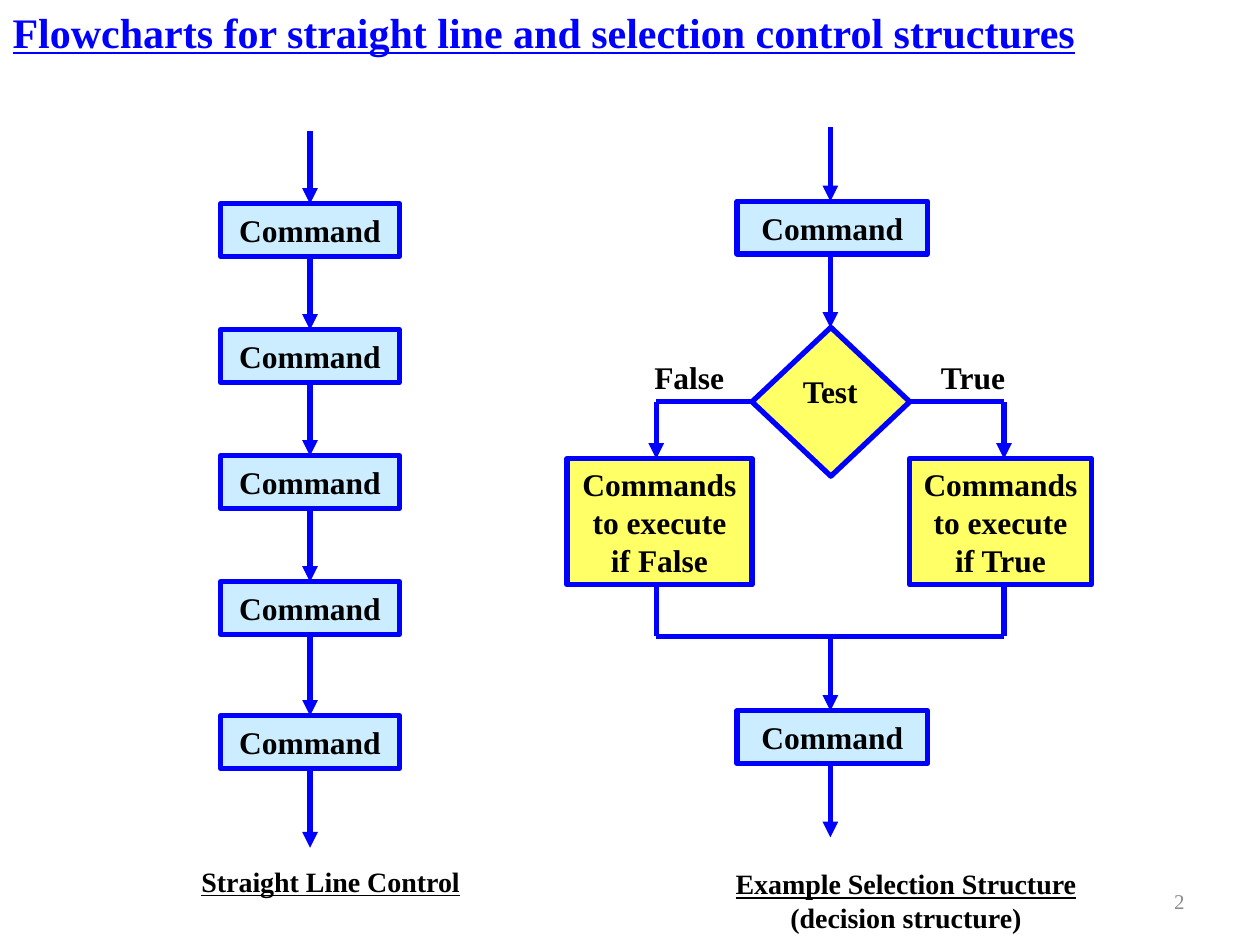
from pptx import Presentation
from pptx.dml.color import RGBColor
from pptx.enum.shapes import MSO_CONNECTOR as Connector, MSO_SHAPE as Shape
from pptx.enum.text import MSO_ANCHOR as Anchor, MSO_AUTO_SIZE as AutoSize, PP_ALIGN as Align
from pptx.oxml.ns import qn
from pptx.util import Cm, Pt
from lxml.etree import SubElement

BLUE = RGBColor(0x00, 0x00, 0xFF)
PALE_BLUE = RGBColor(0xCC, 0xEC, 0xFF)
YELLOW = RGBColor(0xFF, 0xFF, 0x66)
BLACK = RGBColor(0x00, 0x00, 0x00)
GREY = RGBColor(0x8C, 0x8C, 0x8C)

FONT = "Times New Roman"
COMMAND_HEIGHT = 1.06


def write(frame, text, size=18, color=BLACK, bold=True, underlined=(),
          align=Align.CENTER, anchor=Anchor.TOP, wrap=False, fit=AutoSize.NONE):
    """Fill a frame, one paragraph a line; underlined lists line numbers."""
    frame.word_wrap = wrap
    frame.auto_size = fit
    frame.vertical_anchor = anchor
    for number, line in enumerate(text.split("\n")):
        paragraph = frame.add_paragraph() if number else frame.paragraphs[0]
        paragraph.alignment = align
        run = paragraph.add_run()
        run.text = line
        font = run.font
        font.name, font.size, font.bold = FONT, Pt(size), bold
        font.underline = number in underlined
        font.color.rgb = color


def add_label(shapes, text, left, top, width, height, **text_format):
    label = shapes.add_textbox(Cm(left), Cm(top), Cm(width), Cm(height))
    write(label.text_frame, text, **text_format)


def add_node(shapes, kind, left, top, width, height, fill, text=""):
    node = shapes.add_shape(kind, Cm(left), Cm(top), Cm(width), Cm(height))
    node.shadow.inherit = False
    node.fill.solid()
    node.fill.fore_color.rgb = fill
    node.line.color.rgb = BLUE
    node.line.width = Pt(3)
    if text:
        write(node.text_frame, text, anchor=Anchor.MIDDLE)


def add_flow(shapes, x1, y1, x2, y2, arrow=False):
    flow = shapes.add_connector(Connector.STRAIGHT, Cm(x1), Cm(y1), Cm(x2), Cm(y2))
    flow.line.color.rgb = BLUE
    flow.line.width = Pt(3)
    if arrow:
        SubElement(flow.line._get_or_add_ln(), qn("a:tailEnd"), type="triangle")
    SubElement(flow._element.spPr, qn("a:effectLst"))


def draw_straight_line(shapes):
    left, width = 4.45, 3.6
    axis = left + width / 2
    arrow_start = 2.64
    for top in (4.11, 6.65, 9.19, 11.73, 14.43):
        add_flow(shapes, axis, arrow_start, axis, top, arrow=True)
        add_node(shapes, Shape.RECTANGLE, left, top, width, COMMAND_HEIGHT,
                 PALE_BLUE, "Command")
        arrow_start = top + COMMAND_HEIGHT
    add_flow(shapes, axis, arrow_start, axis, 17.09, arrow=True)
    add_label(shapes, "Straight Line Control", 3.81, 17.3, 5.77, 0.94, size=16,
              underlined=(0,), align=Align.LEFT, fit=AutoSize.SHAPE_TO_FIT_TEXT)


def draw_selection(shapes):
    axis, arrow_length = 16.74, 1.49
    test_y, branch_top, branch_height, merge_y = 8.1, 9.25, 2.54, 12.83

    # Test diamond
    add_node(shapes, Shape.DIAMOND, 15.16, 6.6, 3.18, 3, YELLOW)
    add_label(shapes, "Test", 15.9, 7.37, 1.68, 1.02, fit=AutoSize.SHAPE_TO_FIT_TEXT)

    # Commands before and after, each with an arrow in and out
    for top in (4.06, 14.33):
        bottom = top + COMMAND_HEIGHT
        add_node(shapes, Shape.RECTANGLE, 14.86, top, 3.84, COMMAND_HEIGHT,
                 PALE_BLUE, "Command")
        add_flow(shapes, axis, top - arrow_length, axis, top, arrow=True)
        add_flow(shapes, axis, bottom, axis, bottom + arrow_length, arrow=True)

    # Branches: answer, diamond corner, arrow x, box left and width, label left and width
    branches = [
        ("False", 15.16, 13.23, 11.43, 3.73, 12.93, 1.93),
        ("True", 18.34, 20.24, 18.34, 3.66, 18.69, 1.85),
    ]
    for answer, corner, x, left, width, label_left, label_width in branches:
        add_flow(shapes, corner, test_y, x, test_y)
        add_flow(shapes, x, test_y, x, branch_top, arrow=True)
        add_node(shapes, Shape.RECTANGLE, left, branch_top, width, branch_height,
                 YELLOW, f"Commands\nto execute\nif {answer}")
        add_flow(shapes, x, branch_top + branch_height, x, merge_y)
        add_label(shapes, answer, label_left, 7.09, label_width, 1.02,
                  fit=AutoSize.SHAPE_TO_FIT_TEXT)
    add_flow(shapes, branches[0][2], merge_y, branches[1][2], merge_y)

    add_label(shapes, "Example Selection Structure\n(decision structure)",
              14.48, 17.35, 7.57, 1.63, size=16, underlined=(0,),
              fit=AutoSize.SHAPE_TO_FIT_TEXT)


def main():
    deck = Presentation()
    deck.slide_width, deck.slide_height = Cm(25.4), Cm(19.05)
    slide = deck.slides.add_slide(deck.slide_layouts[5])

    # Flowcharts
    draw_straight_line(slide.shapes.add_group_shape().shapes)
    draw_selection(slide.shapes.add_group_shape().shapes)

    # Title
    title = slide.shapes.title
    title.left, title.top, title.width, title.height = Cm(0), Cm(0), Cm(22.6), Cm(1.29)
    write(title.text_frame,
          "Flowcharts for straight line and selection control structures",
          size=24, color=BLUE, underlined=(0,), align=Align.LEFT,
          fit=AutoSize.SHAPE_TO_FIT_TEXT)

    # Page number
    add_label(slide.shapes, "2", 18.21, 17.65, 5.92, 1.02, size=12, color=GREY,
              bold=False, align=Align.RIGHT, anchor=Anchor.MIDDLE, wrap=True)

    deck.save("out.pptx")


if __name__ == "__main__":
    main()
